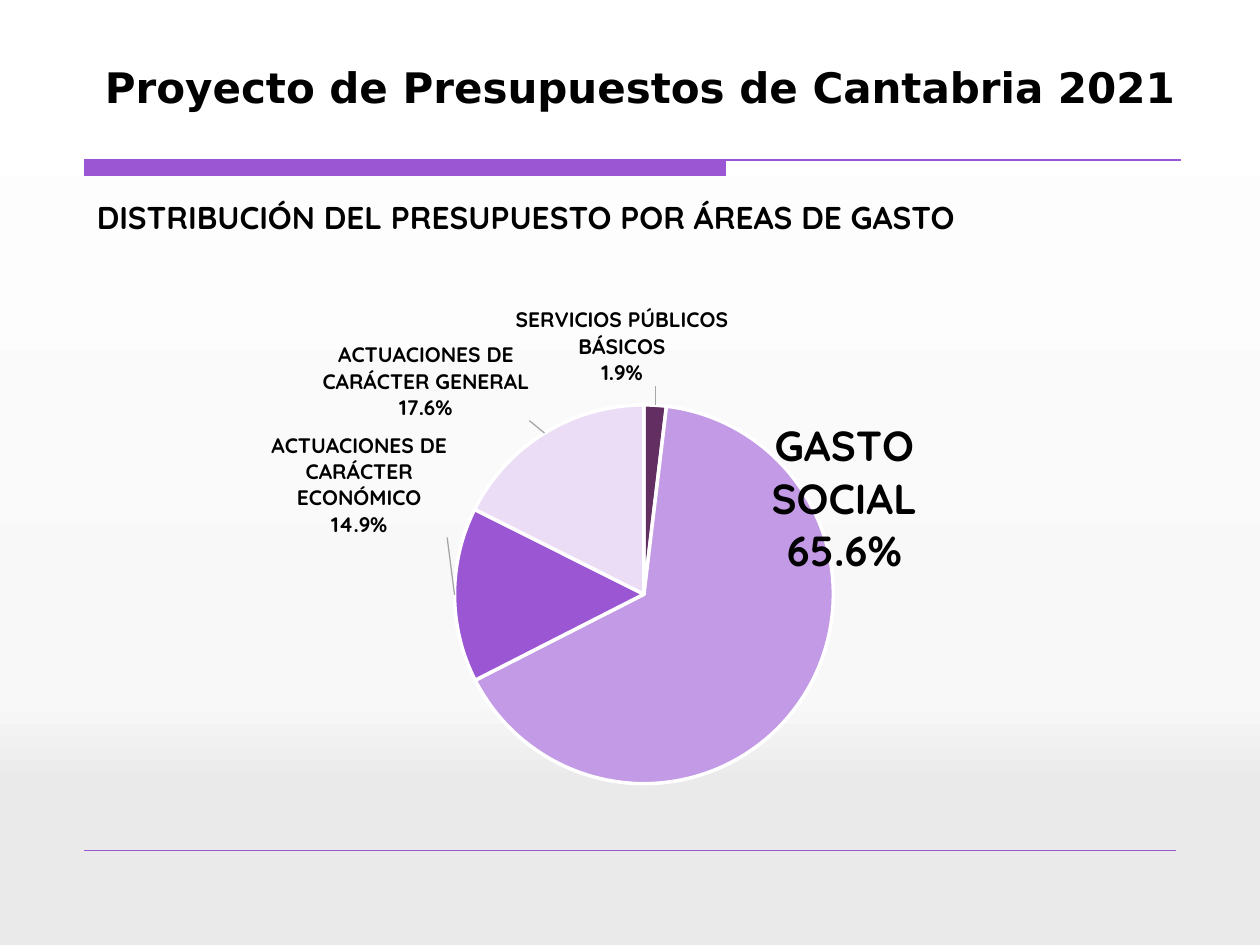
from lxml.etree import SubElement
from pptx import Presentation
from pptx.chart.data import CategoryChartData
from pptx.dml.color import RGBColor
from pptx.enum.chart import XL_CHART_TYPE
from pptx.enum.shapes import MSO_CONNECTOR
from pptx.enum.text import PP_ALIGN
from pptx.oxml import parse_xml
from pptx.oxml.ns import nsdecls, qn
from pptx.util import Inches, Pt

COLOURS = {
    "text": "000000",
    "purple": "9B57D3",
    "plum": "632E62",
    "lilac": "C39AE5",
    "pale": "EBDDF6",
    "white": "FFFFFF",
    "leader": "A6A6A6",
}
BACKGROUND_STOPS = [(0, "FFFFFF"), (74, "F8F8F8"), (83, "EAEAEA"), (100, "EAEAEA")]


def colour(name):
    return RGBColor.from_string(COLOURS[name])


def layout_xml(x, y, size=""):
    target = '<c:layoutTarget val="inner"/><c:xMode val="edge"/><c:yMode val="edge"/>' if size else ""
    return (
        f'<c:layout {nsdecls("c")}><c:manualLayout>{target}'
        f'<c:x val="{x}"/><c:y val="{y}"/>{size}</c:manualLayout></c:layout>'
    )


deck = Presentation()
deck.slide_width, deck.slide_height = Inches(10), Inches(7.5)
page = deck.slides.add_slide(deck.slide_layouts[6])

background = page.background.fill
background.gradient()
background.gradient_angle = 270
stop_list = page.background._cSld.find(".//" + qn("a:gsLst"))
for stop in list(stop_list):
    stop_list.remove(stop)
for position, shade in BACKGROUND_STOPS:
    stop = SubElement(stop_list, qn("a:gs"), pos=str(position * 1000))
    SubElement(stop, qn("a:srgbClr"), val=shade)

builder = page.shapes.build_freeform(Inches(0.67), Inches(1.27))
builder.add_line_segments(
    [(Inches(x), Inches(y)) for x, y in [(5.76, 1.27), (5.76, 1.39), (0.67, 1.39)]], close=True
)
builder.move_to(Inches(0.67), Inches(1.27))
builder.add_line_segments([(Inches(9.37), Inches(1.27))], close=False)
header_bar = builder.convert_to_shape()
header_bar.shadow.inherit = False
header_bar.fill.solid()
header_bar.fill.fore_color.rgb = colour("purple")
header_bar.line.color.rgb = colour("purple")
header_bar.line.width = Pt(0.75)

footer_line = page.shapes.add_connector(
    MSO_CONNECTOR.STRAIGHT, Inches(0.67), Inches(6.75), Inches(9.33), Inches(6.75)
)
footer_line.line.color.rgb = colour("purple")
footer_line.line.width = Pt(0.25)
SubElement(footer_line._element.spPr, qn("a:effectLst"))

slices = [
    ("SERVICIOS PÚBLICOS BÁSICOS", 1.9, "plum", 12, (-0.03, -0.02)),
    ("", 0, "pale", None, None),
    ("GASTO SOCIAL", 65.6, "lilac", 24, (-0.03, -0.47)),
    ("ACTUACIONES DE CARÁCTER ECONÓMICO", 14.9, "purple", 12, (0, -0.18)),
    ("ACTUACIONES DE CARÁCTER GENERAL", 17.6, "pale", 12, (-0.01, -0.01)),
]
chart_data = CategoryChartData()
chart_data.categories = [item[0] for item in slices]
chart_data.add_series("Series 1", [item[1] for item in slices])
chart = page.shapes.add_chart(
    XL_CHART_TYPE.PIE, Inches(0.75), Inches(2.05), Inches(8.9), Inches(4.85), chart_data
).chart
chart.has_legend = False
chart.has_title = False
chart.font.name = "DejaVu Sans"
chart.font.size = Pt(10)
chart.font.color.rgb = colour("text")

plot = chart.plots[0]
plot.vary_by_categories = True
plot_area = chart._chartSpace.chart.plotArea
for old_layout in plot_area.findall(qn("c:layout")):
    plot_area.remove(old_layout)
plot_area.insert(0, parse_xml(layout_xml(0.1, 0.24, '<c:w val="0.78"/><c:h val="0.62"/>')))

series = plot.series[0]
label_parts = []
for index, (name, value, fill, size, offset) in enumerate(slices):
    area = series.points[index].format
    area.fill.solid()
    area.fill.fore_color.rgb = colour(fill)
    area.line.color.rgb = colour("white")
    area.line.width = Pt(2)
    if offset is None:
        label_parts.append(f'<c:dLbl><c:idx val="{index}"/><c:delete val="1"/></c:dLbl>')
    else:
        label_parts.append((index, size, offset))

shared = (
    '<c:numFmt formatCode="0.0%" sourceLinked="0"/><c:spPr><a:noFill/><a:ln><a:noFill/></a:ln></c:spPr>'
    '<c:txPr><a:bodyPr/><a:p><a:pPr><a:defRPr sz="{size}00" b="1"><a:solidFill>'
    f'<a:srgbClr val="{COLOURS["text"]}"/></a:solidFill><a:latin typeface="Quicksand"/>'
    '</a:defRPr></a:pPr><a:endParaRPr lang="es-ES"/></a:p></c:txPr><c:dLblPos val="outEnd"/>'
    '<c:showLegendKey val="0"/><c:showVal val="0"/><c:showCatName val="1"/><c:showSerName val="0"/>'
    '<c:showPercent val="1"/><c:showBubbleSize val="0"/><c:separator>\n</c:separator>'
)
labels_xml = "".join(
    part
    if isinstance(part, str)
    else f'<c:dLbl><c:idx val="{part[0]}"/>{layout_xml(*part[2])}{shared.format(size=part[1])}</c:dLbl>'
    for part in label_parts
)
leader_xml = (
    '<c:showLeaderLines val="1"/><c:leaderLines><c:spPr><a:ln w="9525"><a:solidFill>'
    f'<a:srgbClr val="{COLOURS["leader"]}"/></a:solidFill></a:ln></c:spPr></c:leaderLines>'
)
series._element.find(qn("c:cat")).addprevious(
    parse_xml(f'<c:dLbls {nsdecls("c", "a")}>{labels_xml}{shared.format(size=14)}{leader_xml}</c:dLbls>')
)

headings = [
    ("Proyecto de Presupuestos de Cantabria 2021", (0.67, 0.44, 8.82, 1.11), PP_ALIGN.CENTER,
     {"name": "DejaVu Sans", "size": Pt(24), "bold": True}),
    ("DISTRIBUCIÓN DEL PRESUPUESTO POR ÁREAS DE GASTO", (0.67, 1.52, 8.27, 0.4), PP_ALIGN.LEFT,
     {"name": "Quicksand", "size": Pt(18), "bold": True}),
]
for words, place, alignment, font_format in headings:
    box = page.shapes.add_textbox(*[Inches(length) for length in place])
    box.text_frame.word_wrap = True
    para = box.text_frame.paragraphs[0]
    para.alignment = alignment
    span = para.add_run()
    span.text = words
    span.font.color.rgb = colour("text")
    for attribute, setting in font_format.items():
        setattr(span.font, attribute, setting)

deck.save("out.pptx")
